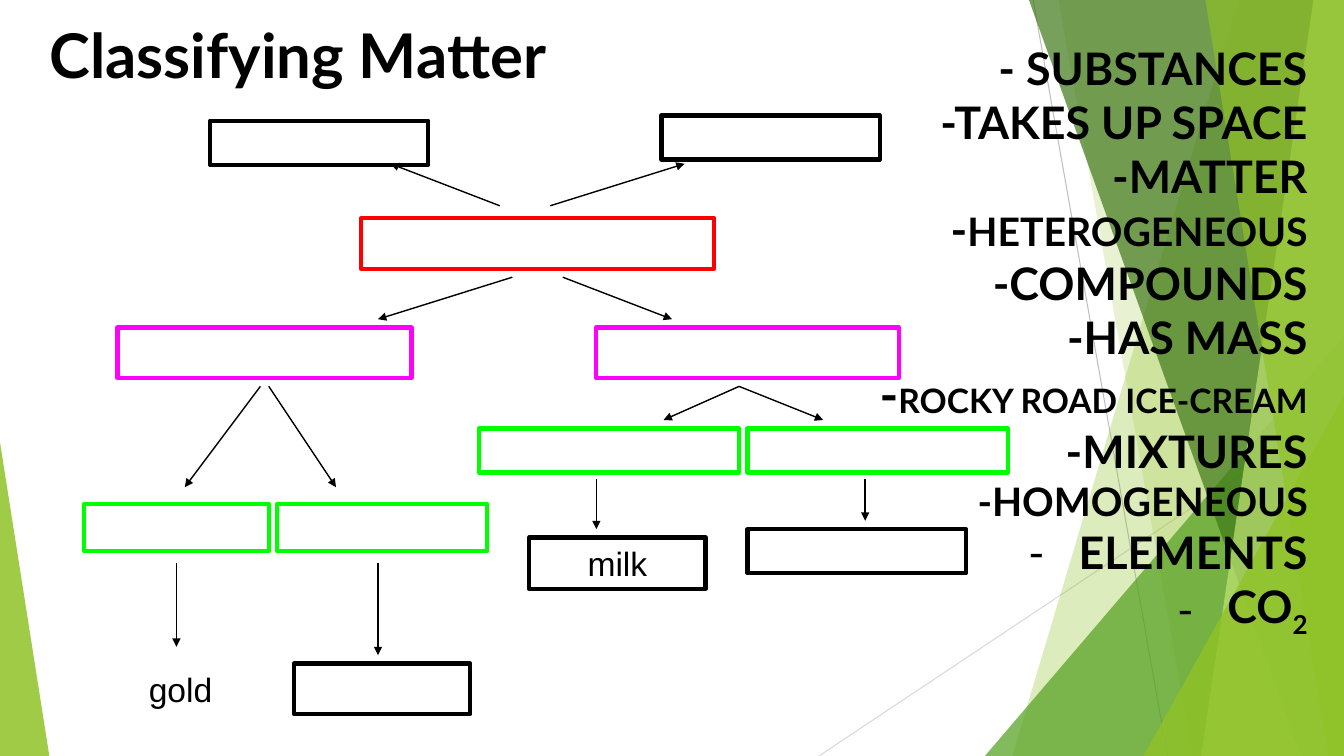
"""Build the Classifying Matter slide: a blank concept tree and its word bank."""
from lxml import etree
from pptx import Presentation
from pptx.dml.color import RGBColor
from pptx.enum.shapes import MSO_CONNECTOR, MSO_SHAPE
from pptx.enum.text import MSO_ANCHOR, MSO_AUTO_SIZE, PP_ALIGN
from pptx.oxml.ns import qn
from pptx.util import Pt

PX = 9525
WIDTH, HEIGHT = 1280, 720
STRAIGHT = MSO_CONNECTOR.STRAIGHT
RECTANGLE, TRIANGLE = MSO_SHAPE.RECTANGLE, MSO_SHAPE.ISOSCELES_TRIANGLE
CENTER, RIGHT = PP_ALIGN.CENTER, PP_ALIGN.RIGHT
TOP, MIDDLE = MSO_ANCHOR.TOP, MSO_ANCHOR.MIDDLE
FIXED_SIZE = MSO_AUTO_SIZE.NONE

BLACK = RGBColor(0x00, 0x00, 0x00)
WHITE = RGBColor(0xFF, 0xFF, 0xFF)
RED = RGBColor(0xFF, 0x00, 0x00)
MAGENTA = RGBColor(0xFF, 0x00, 0xFF)
GREEN = RGBColor(0x00, 0xFF, 0x00)
GRAY = RGBColor(0xBF, 0xBF, 0xBF)
LIGHT_GRAY = RGBColor(0xD9, 0xD9, 0xD9)
LEAF = RGBColor(0x90, 0xC2, 0x26)
GRASS = RGBColor(0x54, 0xA0, 0x21)
FOREST = RGBColor(0x3F, 0x78, 0x19)
LIME = RGBColor(0xC0, 0xE4, 0x74)

RAYS = [((984, 0, 1112, 720), GRAY), ((1280, 387, 780, 720), LIGHT_GRAY)]
# top x, bottom x, color, opacity
FACETS = [
    ("strip", (1179, 964), LEAF, 30),
    ("strip", (1008, 1136), LEAF, 20),
    ("triangle", (938, 320, 342, 1), GRASS, 72),
    ("strip", (980, 1239), FOREST, 70),
    ("strip", (1251, 1144), LIME, 70),
    ("strip", (1148, 1265), LEAF, 65),
    ("triangle", (1089, 377, 191, 1), LEAF, 80),
    ("triangle", (0, 421, 47, 0), LEAF, 85),
]
BOXES = [
    ((344, 208, 336, 48), RED, ""),
    ((112, 312, 280, 48), MAGENTA, ""),
    ((568, 312, 288, 48), MAGENTA, ""),
    ((80, 480, 176, 45), GREEN, ""),
    ((264, 480, 200, 45), GREEN, ""),
    ((456, 408, 248, 42), GREEN, ""),
    ((712, 408, 248, 42), GREEN, ""),
    ((120, 632, 104, 48), WHITE, "gold"),
    ((280, 632, 168, 48), BLACK, ""),
    ((504, 512, 168, 49), BLACK, "milk"),
    ((712, 504, 208, 42), BLACK, ""),
    ((630, 110, 208, 42), BLACK, ""),
    ((200, 115, 208, 42), BLACK, ""),
]
ARROWS = [
    (488, 264, 360, 304), (536, 264, 640, 304),
    (248, 368, 176, 464), (256, 368, 320, 464),
    (704, 368, 632, 400), (704, 368, 784, 400),
    (168, 536, 168, 616), (360, 536, 360, 624),
    (568, 456, 568, 504), (824, 456, 824, 496),
    (524, 196, 652, 156), (476, 196, 372, 156),
]
WORD_BANK = [
    [("- SUBSTANCES", 32)],
    [("-TAKES UP SPACE", 32)],
    [("-MATTER", 32)],
    [("-", 32), ("HETEROGENEOUS", 28)],
    [("-COMPOUNDS", 32)],
    [("-HAS MASS", 32)],
    [("-", 36), ("ROCKY ROAD ICE-CREAM", 24)],
    [("-MIXTURES", 32)],
    [("-HOMOGENEOUS", 28)],
]
BULLETED = [[("ELEMENTS", 32)], [("CO", 32), ("2", 32, -25000)]]


def emu(*lengths):
    """Turn px lengths into EMU."""
    return [length * PX for length in lengths]


def write_text(paragraph, text, size=24, font="Lato", bold=True, baseline=0):
    """Add one formatted run to a paragraph."""
    run = paragraph.add_run()
    run.text = text
    run.font.size = Pt(size)
    run.font.name = font
    run.font.bold = bold
    run.font.color.rgb = BLACK
    if baseline:
        run._r.get_or_add_rPr().set("baseline", str(baseline))


def paint(facet, color, opacity):
    """Give a shape a translucent fill and no outline or shadow."""
    facet.shadow.inherit = False
    facet.line.fill.background()
    facet.fill.solid()
    facet.fill.fore_color.rgb = color
    tint = facet.element.spPr.find(".//" + qn("a:srgbClr"))
    etree.SubElement(tint, qn("a:alpha")).set("val", str(opacity * 1000))


def add_strip(shapes, top_x, bottom_x):
    """Add a full-height facet between a slanted edge and the right side."""
    outline = shapes.build_freeform(top_x, 0, scale=PX)
    corners = [(WIDTH, 0), (WIDTH, HEIGHT), (bottom_x, HEIGHT)]
    outline.add_line_segments(corners, close=True)
    return outline.convert_to_shape()


def add_triangle(shapes, left, top, width, apex):
    """Add a triangle that stands on the bottom edge."""
    triangle = shapes.add_shape(TRIANGLE, *emu(left, top, width, HEIGHT - top))
    triangle.adjustments[0] = apex
    return triangle


def add_line(shapes, ends, color=BLACK, weight=1, arrow=True):
    """Add a straight line, with an arrowhead at its end if wanted."""
    connector = shapes.add_connector(STRAIGHT, *emu(*ends))
    connector.line.color.rgb = color
    connector.line.width = Pt(weight)
    if arrow:
        stroke = connector.line._get_or_add_ln()
        etree.SubElement(stroke, qn("a:tailEnd")).set("type", "triangle")
    etree.SubElement(connector.element.spPr, qn("a:effectLst"))


def add_box(shapes, bounds, color, label):
    """Add an outlined answer box with an optional label."""
    box = shapes.add_shape(RECTANGLE, *emu(*bounds))
    box.shadow.inherit = False
    box.fill.background()
    box.line.color.rgb = color
    box.line.width = Pt(3)
    if label:
        box.text_frame.vertical_anchor = MIDDLE
        paragraph = box.text_frame.paragraphs[0]
        paragraph.alignment = CENTER
        write_text(paragraph, label, font="Arial", bold=False)


def place(placeholder, shapes, bounds):
    """Move a placeholder to the front and to its bounds."""
    shapes.element.append(placeholder.element)
    (placeholder.left, placeholder.top,
     placeholder.width, placeholder.height) = emu(*bounds)
    frame = placeholder.text_frame
    frame.word_wrap = True
    frame.auto_size = FIXED_SIZE
    frame.vertical_anchor = TOP
    return frame


def set_bullet(paragraph, indent=0):
    """Hang a dash bullet at the indent, or remove the bullet at zero."""
    properties = paragraph._p.get_or_add_pPr()
    properties.set("marL", str(indent * PX))
    properties.set("indent", str(-indent * PX))
    if indent:
        etree.SubElement(properties, qn("a:buFont")).set("typeface", "Lato")
        etree.SubElement(properties, qn("a:buChar")).set("char", "-")
    else:
        etree.SubElement(properties, qn("a:buNone"))


def fill_word_bank(frame):
    """Write the right-aligned words of the word bank."""
    entries = [(words, 0) for words in WORD_BANK]
    entries += [(words, 48) for words in BULLETED]
    for number, (words, indent) in enumerate(entries):
        paragraph = frame.add_paragraph() if number else frame.paragraphs[0]
        paragraph.alignment = RIGHT
        paragraph.space_before = Pt(0)
        set_bullet(paragraph, indent)
        for text, size, *baseline in words:
            write_text(paragraph, text, size, baseline=sum(baseline))


def main():
    """Build and save the slide."""
    deck = Presentation()
    deck.slide_width, deck.slide_height = emu(WIDTH, HEIGHT)
    slide = deck.slides.add_slide(deck.slide_layouts[1])
    shapes = slide.shapes
    for ends, color in RAYS:
        add_line(shapes, ends, color, weight=0.75, arrow=False)
    builders = {"strip": add_strip, "triangle": add_triangle}
    for kind, geometry, color, opacity in FACETS:
        paint(builders[kind](shapes, *geometry), color, opacity)
    heading = place(shapes.title, shapes, (-64, 19, 696, 88)).paragraphs[0]
    heading.alignment = CENTER
    heading.line_spacing = 0.9
    write_text(heading, "Classifying Matter", size=44)
    for bounds, color, label in BOXES:
        add_box(shapes, bounds, color, label)
    for ends in ARROWS:
        add_line(shapes, ends)
    fill_word_bank(place(slide.placeholders[1], shapes, (804, 34, 451, 578)))
    deck.save("out.pptx")


if __name__ == "__main__":
    main()
